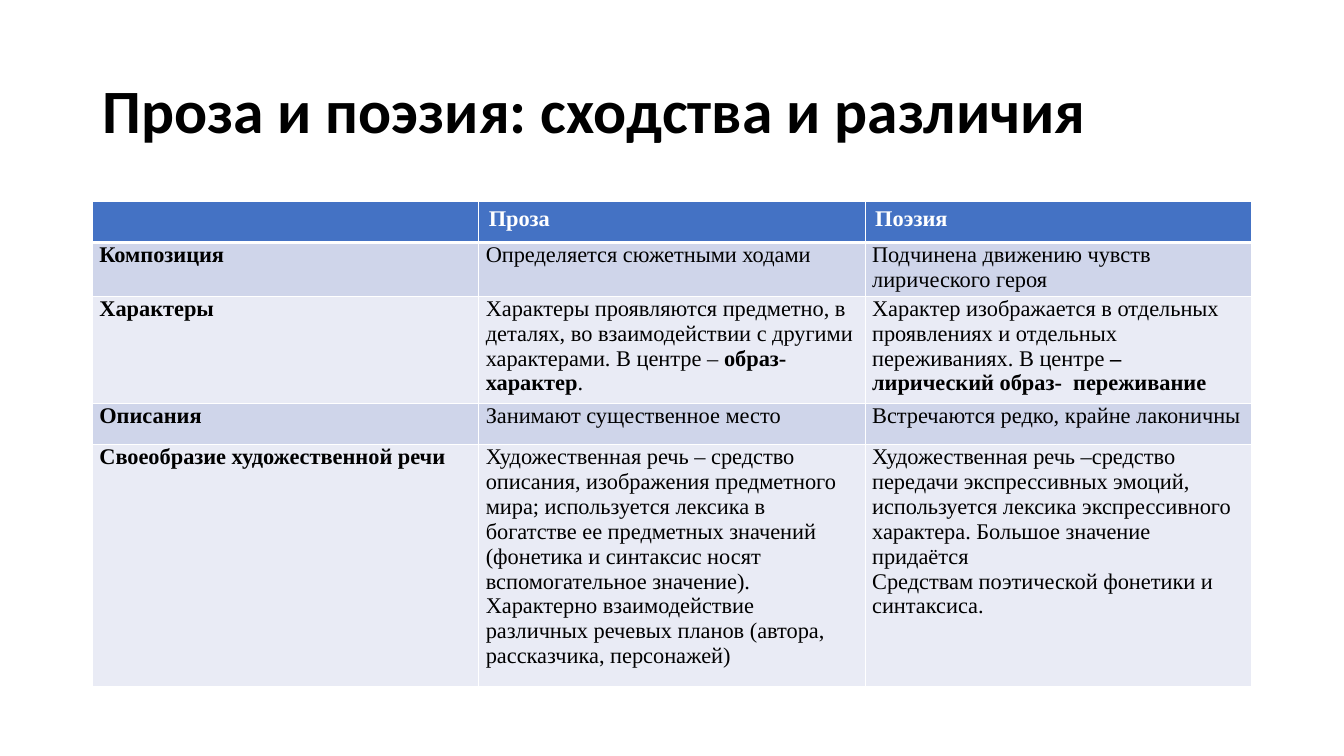
"""Build a slide with a table that compares prose and poetry."""
from dataclasses import dataclass

from lxml import etree
from pptx import Presentation
from pptx.dml.color import RGBColor
from pptx.enum.text import MSO_ANCHOR
from pptx.oxml.ns import qn
from pptx.util import Pt

MIDDLE = MSO_ANCHOR.MIDDLE
COLORS = {
    "black": "000000",
    "white": "FFFFFF",
    "header": "4472C4",
    "odd": "CFD5EA",
    "even": "E9EBF5",
}
TITLE_FONT = "Calibri"
TABLE_FONT = "Times New Roman"
LEFT, WIDTH = 66, 828
EMU_PER_POINT = 12700


@dataclass(frozen=True)
class Span:
    text: str
    bold: bool = False


@dataclass(frozen=True)
class Row:
    height: float
    cells: tuple[tuple[tuple[Span, ...], ...], ...]


def plain(*texts: str, bold: bool = False) -> tuple[tuple[Span, ...], ...]:
    return tuple((Span(text, bold),) for text in texts)


ROWS = (
    Row(29.2, ((), plain("Проза", bold=True), plain("Поэзия", bold=True))),
    Row(35.4, (
        plain("Композиция", bold=True),
        plain("Определяется сюжетными ходами"),
        plain("Подчинена движению чувств лирического героя"),
    )),
    Row(70.8, (
        plain("Характеры", bold=True),
        ((
            Span("Характеры проявляются предметно, в деталях, во взаимодействии "
                 "с другими характерами. В центре – "),
            Span("образ-характер", True),
            Span("."),
        ),),
        ((
            Span("Характер изображается в отдельных проявлениях и отдельных "
                 "переживаниях. В центре"),
            Span(" – лирический образ-  переживание", True),
        ),),
    )),
    Row(29.2, (
        plain("Описания", bold=True),
        plain("Занимают существенное место"),
        plain("Встречаются редко, крайне лаконичны"),
    )),
    Row(159.6, (
        plain("Своеобразие художественной речи", bold=True),
        plain("Художественная речь – средство описания, изображения предметного "
              "мира; используется лексика в богатстве ее предметных значений "
              "(фонетика и синтаксис носят вспомогательное значение). Характерно "
              "взаимодействие различных речевых планов (автора, рассказчика, "
              "персонажей)"),
        plain("Художественная речь –средство передачи экспрессивных эмоций, "
              "используется лексика экспрессивного характера. Большое значение "
              "придаётся",
              "Средствам поэтической фонетики и синтаксиса."),
    )),
)


def add_span(para, text: str, *, font: str, size: float, color: str, bold: bool) -> None:
    span = para.add_run()
    span.text = text
    span.font.name = font
    span.font.size = Pt(size)
    span.font.bold = bold
    span.font.color.rgb = RGBColor.from_string(COLORS[color])


def add_title(page, text: str) -> None:
    box = page.shapes.add_textbox(Pt(LEFT), Pt(28.8), Pt(WIDTH), Pt(104.4))
    frame = box.text_frame
    frame.word_wrap = True
    frame.vertical_anchor = MIDDLE
    para = frame.paragraphs[0]
    para.line_spacing = 0.9
    add_span(para, text, font=TITLE_FONT, size=44, color="black", bold=True)


def set_borders(cell, top: float, bottom: float) -> None:
    properties = cell._tc.get_or_add_tcPr()
    widths = {"a:lnL": 1, "a:lnR": 1, "a:lnT": top, "a:lnB": bottom}
    for position, (tag, width) in enumerate(widths.items()):
        line = etree.Element(qn(tag), w=str(int(width * EMU_PER_POINT)))
        fill = etree.SubElement(line, qn("a:solidFill"))
        etree.SubElement(fill, qn("a:srgbClr"), val=COLORS["white"])
        properties.insert(position, line)


def fill_cell(cell, paragraphs: tuple[tuple[Span, ...], ...], row_index: int) -> None:
    header = row_index == 0
    fill = "header" if header else "odd" if row_index % 2 else "even"
    cell.fill.solid()
    cell.fill.fore_color.rgb = RGBColor.from_string(COLORS[fill])
    if not header:
        cell.margin_left = cell.margin_right = Pt(5.04)
        cell.margin_top = cell.margin_bottom = Pt(0)
    set_borders(cell, top=3 if row_index == 1 else 1, bottom=3 if header else 1)
    frame = cell.text_frame
    for index, spans in enumerate(paragraphs):
        para = frame.add_paragraph() if index else frame.paragraphs[0]
        for span in spans:
            add_span(para, span.text, font=TABLE_FONT, size=16,
                     color="white" if header else "black", bold=span.bold)


def add_comparison(page, rows: tuple[Row, ...]) -> None:
    height = sum(row.height for row in rows)
    table = page.shapes.add_table(
        len(rows), len(rows[0].cells), Pt(LEFT), Pt(144), Pt(WIDTH), Pt(height)
    ).table
    for row_index, row in enumerate(rows):
        table.rows[row_index].height = Pt(row.height)
        for column_index, paragraphs in enumerate(row.cells):
            fill_cell(table.cell(row_index, column_index), paragraphs, row_index)


def main() -> None:
    deck = Presentation()
    deck.slide_width, deck.slide_height = Pt(960), Pt(540)
    page = deck.slides.add_slide(deck.slide_layouts[6])
    add_title(page, "Проза и поэзия: сходства и различия")
    add_comparison(page, ROWS)
    deck.save("out.pptx")


if __name__ == "__main__":
    main()
